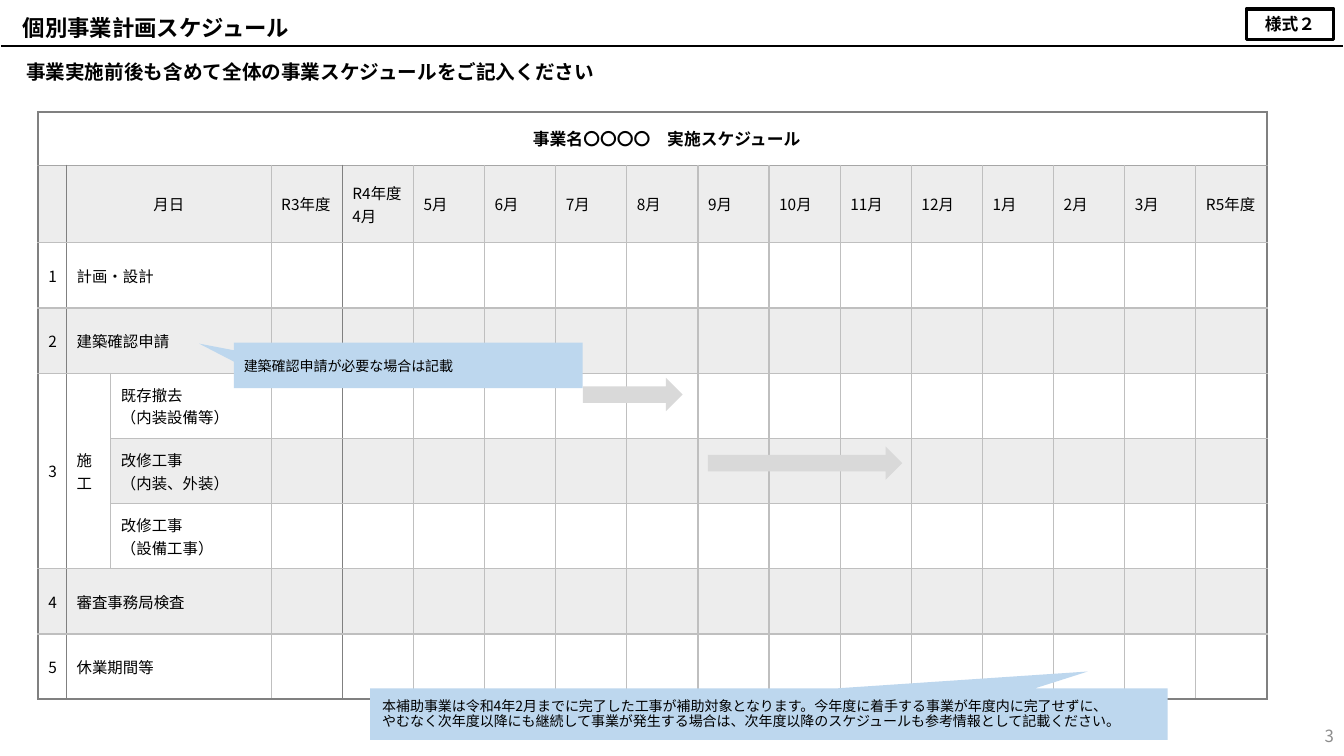
from lxml.etree import SubElement
from pptx import Presentation
from pptx.dml.color import RGBColor
from pptx.enum.shapes import MSO_CONNECTOR, MSO_SHAPE
from pptx.enum.text import MSO_ANCHOR, MSO_AUTO_SIZE, PP_ALIGN
from pptx.oxml.ns import qn
from pptx.util import Inches, Pt

FONT = "Noto Sans CJK JP"
COLORS = {
    "text": "000000", "page": "8C8C8C", "callout": "BDD7EE", "arrow": "D9D9D9",
    "band": "A5A5A5", "frame": "808080", "title_rule": "A6A6A6", "grid": "BFBFBF",
}
LABEL_WIDTHS = [0.28, 0.44, 1.59]
HEADING_HEIGHTS = [0.53, 0.77]
PERIOD_COUNT, TASK_COUNT = 14, 7
COLUMN_COUNT = len(LABEL_WIDTHS) + PERIOD_COUNT
ROW_COUNT = len(HEADING_HEIGHTS) + TASK_COUNT
BANDED_ROWS = {1, 3, 5, 7}
MONTHS = [f"{month}月" for month in [*range(5, 13), *range(1, 4)]]
PERIODS = ["R3年度", "R4年度\n4月", *MONTHS, "R5年度"]
# Row, column, row span, column span
MERGES = [(0, 1, 1, 16), (4, 0, 3, 1), (4, 1, 3, 1)]
MERGES += [(row, 1, 1, 2) for row in (1, 2, 3, 7, 8)]
TASKS = {
    (0, 1): "事業名〇〇〇〇　実施スケジュール",
    (1, 1): "月日",
    (2, 0): "1", (2, 1): "計画・設計",
    (3, 0): "2", (3, 1): "建築確認申請",
    (4, 0): "3", (4, 1): "施工",
    (4, 2): "既存撤去\n（内装設備等）",
    (5, 2): "改修工事\n（内装、外装）",
    (6, 2): "改修工事\n（設備工事）",
    (7, 0): "4", (7, 1): "審査事務局検査",
    (8, 0): "5", (8, 1): "休業期間等",
}


def color(name):
    return RGBColor.from_string(COLORS[name])


def write(frame, text, size, bold=False, align=PP_ALIGN.LEFT, ink="text"):
    frame.text = text
    for paragraph in frame.paragraphs:
        paragraph.alignment = align
        for run in paragraph.runs:
            run.font.size = Pt(size)
            run.font.bold = bold
            run.font.name = FONT
            run.font.color.rgb = color(ink)
            SubElement(run.font._element, qn("a:ea"), typeface=FONT)


def add_label(slide, box, text, size, **style):
    label = slide.shapes.add_textbox(*map(Inches, box))
    label.text_frame.word_wrap = True
    write(label.text_frame, text, size, **style)
    return label.text_frame


def add_block(slide, preset, box, fill=None):
    block = slide.shapes.add_shape(preset, *map(Inches, box))
    block.shadow.inherit = False
    block.line.fill.background()
    if fill:
        block.fill.solid()
        block.fill.fore_color.rgb = color(fill)
    else:
        block.fill.background()
    return block


def add_callout(slide, box, tip, text):
    callout = add_block(slide, MSO_SHAPE.RECTANGULAR_CALLOUT, box, "callout")
    callout.adjustments[0], callout.adjustments[1] = tip
    callout.text_frame.vertical_anchor = MSO_ANCHOR.MIDDLE
    write(callout.text_frame, text, 10)
    return callout.text_frame


def add_header(slide, box):
    left, top, width, height = box
    # Title and the rule under it
    title = add_label(slide, (left + 0.12, top + 0.09, 13, 0.37),
                      "個別事業計画スケジュール", 16, bold=True)
    title.auto_size = MSO_AUTO_SIZE.SHAPE_TO_FIT_TEXT
    rule_y = Inches(top + height)
    rule = slide.shapes.add_connector(MSO_CONNECTOR.STRAIGHT, Inches(left), rule_y,
                                      Inches(left + width), rule_y)
    rule.line.color.rgb = color("text")
    rule.line.width = Pt(1.5)
    SubElement(rule._element.spPr, qn("a:effectLst"))
    # Form number
    form = add_block(slide, MSO_SHAPE.RECTANGLE,
                     (left + width - 0.96, top + 0.09, 0.87, 0.3))
    form.line.color.rgb = color("text")
    form.line.width = Pt(2.25)
    form.text_frame.vertical_anchor = MSO_ANCHOR.TOP
    form.text_frame.auto_size = MSO_AUTO_SIZE.SHAPE_TO_FIT_TEXT
    write(form.text_frame, "様式２", 12, bold=True, align=PP_ALIGN.CENTER)
    # Instruction
    instruction = add_label(slide, (left + 0.15, top + 0.55, 6.5, 0.34),
                            "事業実施前後も含めて全体の事業スケジュールをご記入ください",
                            14, bold=True)
    instruction.auto_size = MSO_AUTO_SIZE.SHAPE_TO_FIT_TEXT


def vertical_rule(row, edge):
    if edge in (0, COLUMN_COUNT):
        return "frame", 1.5
    if edge == 1:
        return ("frame", 0.5) if row else None
    if edge == 4:
        return "frame", 0.5 if row < 4 else 1
    return "grid", 1


def horizontal_rule(edge):
    if edge in (0, ROW_COUNT):
        return "frame", 1.5
    return ("title_rule" if edge == 1 else "grid"), 1


def draw_borders(cell, row, column):
    properties = cell._tc.get_or_add_tcPr()
    borders = {
        "a:lnL": vertical_rule(row, column),
        "a:lnR": vertical_rule(row, column + cell.span_width),
        "a:lnT": horizontal_rule(row),
        "a:lnB": horizontal_rule(row + cell.span_height),
    }
    for side, border in borders.items():
        line = SubElement(properties, qn(side))
        if border is None:
            SubElement(line, qn("a:noFill"))
            continue
        name, width = border
        line.set("w", str(Pt(width)))
        fill = SubElement(line, qn("a:solidFill"))
        SubElement(fill, qn("a:srgbClr"), val=COLORS[name])


def fill_cell(cell, banded):
    if not banded:
        cell.fill.background()
        return
    cell.fill.solid()
    cell.fill.fore_color.rgb = color("band")
    shade = cell._tc.tcPr.find(qn("a:solidFill")).find(qn("a:srgbClr"))
    SubElement(shade, qn("a:alpha"), val="20000")


def add_schedule(slide, box):
    width, height = box[2:]
    schedule = slide.shapes.add_table(ROW_COUNT, COLUMN_COUNT, *map(Inches, box)).table
    schedule.first_row = schedule.horz_banding = False
    # Periods and tasks share what the labels and headings leave
    period_width = (width - sum(LABEL_WIDTHS)) / PERIOD_COUNT
    task_height = (height - sum(HEADING_HEIGHTS)) / TASK_COUNT
    for column, size in zip(schedule.columns, LABEL_WIDTHS + [period_width] * PERIOD_COUNT):
        column.width = Inches(size)
    for row, size in zip(schedule.rows, HEADING_HEIGHTS + [task_height] * TASK_COUNT):
        row.height = Inches(size)
    for row, column, down, across in MERGES:
        end = schedule.cell(row + down - 1, column + across - 1)
        schedule.cell(row, column).merge(end)

    entries = TASKS | {(1, 3 + i): period for i, period in enumerate(PERIODS)}
    for row in range(ROW_COUNT):
        for column in range(COLUMN_COUNT):
            cell = schedule.cell(row, column)
            if not cell.is_spanned:
                draw_borders(cell, row, column)
            fill_cell(cell, row in BANDED_ROWS)
            if (row, column) in entries:
                centred = column == 0 or (column == 1 and row < 2)
                cell.vertical_anchor = MSO_ANCHOR.MIDDLE
                write(cell.text_frame, entries[row, column], 11 if row else 12,
                      bold=row == 0,
                      align=PP_ALIGN.CENTER if centred else PP_ALIGN.LEFT)


def add_annotations(slide, box):
    left, top = box[:2]
    # Guidance callouts
    add_callout(slide, (left + 1.94, top + 2.29, 3.46, 0.45), (-0.6, -0.48),
                "建築確認申請が必要な場合は記載")
    guidance = add_callout(
        slide, (left + 3.29, top + 5.72, 7.91, 0.51), (0.4, -0.83),
        "本補助事業は令和4年2月までに完了した工事が補助対象となります。今年度に着手する事業が年度内に完了せずに、\v"
        "やむなく次年度以降にも継続して事業が発生する場合は、次年度以降のスケジュールも参考情報として記載ください。")
    guidance.margin_left = guidance.margin_right = Inches(0.12)
    guidance.margin_top = guidance.margin_bottom = Inches(0.12)
    guidance.paragraphs[0].line_spacing = 0.9
    # Work periods
    for x, y, width in [(5.4, 2.64, 0.99), (6.64, 3.32, 1.93)]:
        add_block(slide, MSO_SHAPE.RIGHT_ARROW, (left + x, top + y, width, 0.33), "arrow")


def main():
    deck = Presentation()
    deck.slide_width, deck.slide_height = Inches(13.33), Inches(7.5)
    slide = deck.slides.add_slide(deck.slide_layouts[6])
    schedule_box = (0.38, 1.11, 12.19, 5.83)
    add_header(slide, (0.01, 0, 13.31, 0.46))
    add_schedule(slide, schedule_box)
    page = add_label(slide, (10.33, 7.1, 3, 0.4), "3", 12,
                     align=PP_ALIGN.RIGHT, ink="page")
    page.vertical_anchor = MSO_ANCHOR.MIDDLE
    add_annotations(slide, schedule_box)
    deck.save("out.pptx")


if __name__ == "__main__":
    main()
